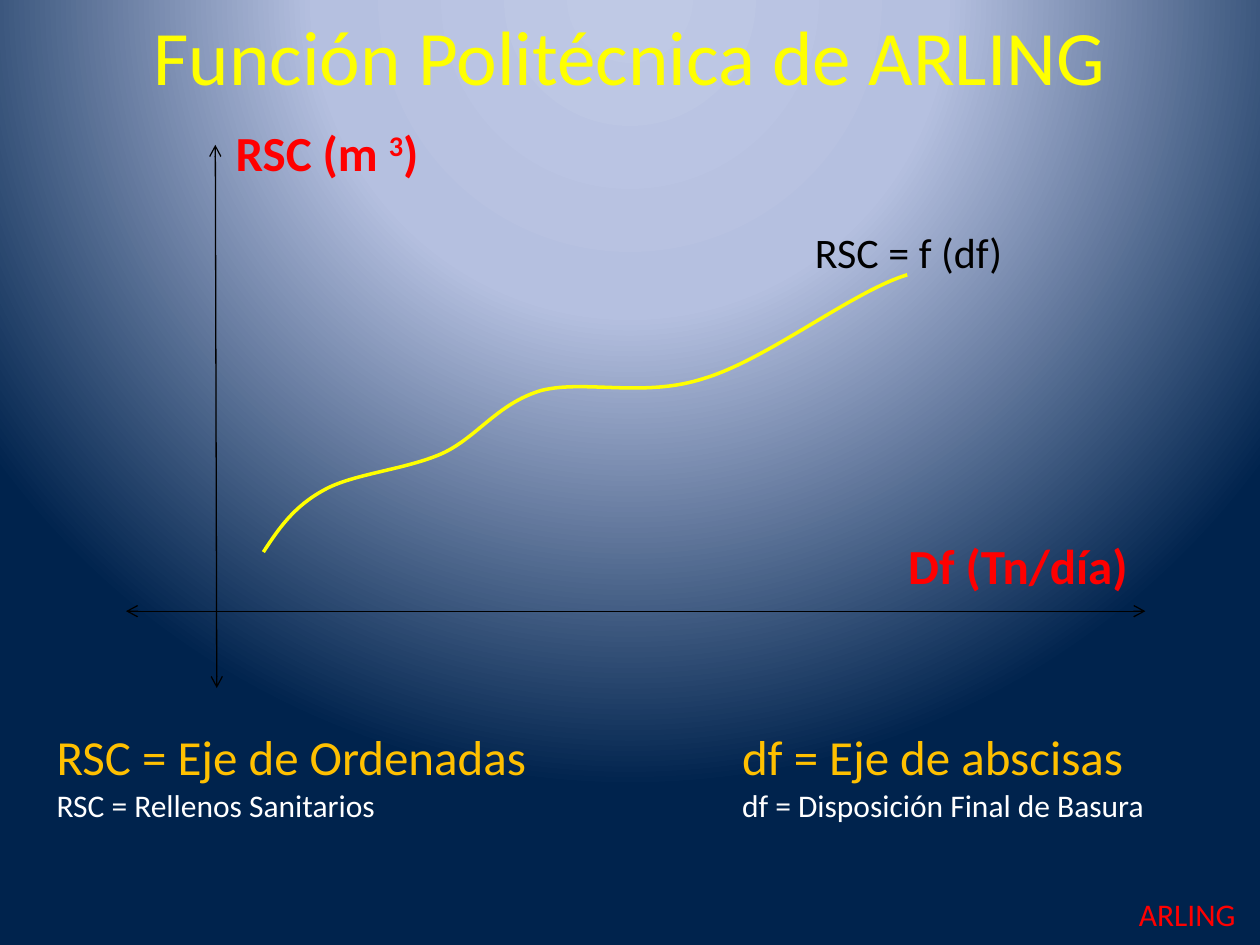
from dataclasses import dataclass

from lxml import etree
from pptx import Presentation
from pptx.dml.color import RGBColor
from pptx.enum.shapes import MSO_CONNECTOR
from pptx.enum.text import MSO_ANCHOR, MSO_AUTO_SIZE, PP_ALIGN
from pptx.oxml import parse_xml
from pptx.oxml.ns import nsdecls, qn
from pptx.util import Cm, Pt

STRAIGHT = MSO_CONNECTOR.STRAIGHT
TOP, MIDDLE = MSO_ANCHOR.TOP, MSO_ANCHOR.MIDDLE
LEFT, CENTER = PP_ALIGN.LEFT, PP_ALIGN.CENTER
NO_FIT, FIT_SHAPE = MSO_AUTO_SIZE.NONE, MSO_AUTO_SIZE.SHAPE_TO_FIT_TEXT

FONT = "Calibri"
YELLOW = RGBColor(0xFF, 0xFF, 0x00)
GOLD = RGBColor(0xFF, 0xC0, 0x00)
RED = RGBColor(0xFF, 0x00, 0x00)
BLACK = RGBColor(0x00, 0x00, 0x00)
WHITE = RGBColor(0xFF, 0xFF, 0xFF)
BG_STOPS = [
    (0, RGBColor(0xBF, 0xC9, 0xE5)),
    (40, RGBColor(0xB5, 0xC0, 0xE0)),
    (100, RGBColor(0x00, 0x23, 0x4D)),
]


@dataclass
class Run:
    text: str
    size: float
    color: RGBColor
    bold: bool = False
    superscript: bool = False


@dataclass
class Label:
    box: tuple[float, float, float, float]
    paragraphs: list[list[Run]]
    wrap: bool = True
    align: PP_ALIGN = LEFT
    anchor: MSO_ANCHOR = TOP
    fit: MSO_AUTO_SIZE = FIT_SHAPE


@dataclass
class Axis:
    start: tuple[float, float]
    end: tuple[float, float]


def legend(left: float, width: float, axis: str, meaning: str) -> Label:
    """Axis role over the meaning of its variable."""
    return Label((left, 14.53, width, 2.24),
                 [[Run(axis, 28, GOLD)], [Run(meaning, 18, WHITE)]], wrap=False)


LABELS = [
    Label((1.27, -0.48, 22.86, 3.18),
          [[Run("Función Politécnica de ARLING", 44, YELLOW)]],
          align=CENTER, anchor=MIDDLE, fit=NO_FIT),
    Label((16.18, 4.45, 4.32, 1.27), [[Run("RSC = f (df)", 24, BLACK)]], wrap=False),
    legend(14.71, 9.02, "df = Eje de abscisas", "df = Disposición Final de Basura"),
    legend(0.89, 10.08, "RSC = Eje de Ordenadas", "RSC = Rellenos Sanitarios"),
    Label((4.5, 2.34, 6.63, 1.45),
          [[Run("RSC (m ", 28, RED, True), Run("3", 28, RED, True, True),
            Run(")", 28, RED, True)]]),
    Label((18.06, 10.67, 8.84, 1.45), [[Run("Df (Tn/día)", 28, RED, True)]]),
    Label((22.71, 17.91, 5.99, 1.02), [[Run("ARLING", 18, RED)]]),
]

AXES = [Axis((4.34, 2.92), (4.37, 13.87)), Axis((2.54, 12.32), (23.09, 12.32))]

# Start point, then two control points and an end point per Bézier segment
CURVE = [
    (5.31, 11.13),
    (5.61, 10.67), (5.92, 10.21), (6.53, 9.88),
    (7.11, 9.55), (8.18, 9.47), (8.92, 9.14),
    (9.63, 8.81), (10.03, 8.13), (10.92, 7.87),
    (11.81, 7.65), (13, 8.03), (14.22, 7.62),
    (15.47, 7.24), (17.2, 5.87), (18.29, 5.54),
]


def set_background(s) -> None:
    s.background.fill.solid()
    bg = s.element.find(".//" + qn("p:bgPr"))
    stops = "".join(
        f'<a:gs pos="{pos * 1000}"><a:srgbClr val="{color}"/></a:gs>'
        for pos, color in BG_STOPS)
    grad = parse_xml(
        f'<a:gradFill {nsdecls("a")} rotWithShape="1"><a:gsLst>{stops}</a:gsLst>'
        '<a:path path="circle"><a:fillToRect l="50000" t="-80000" r="50000" b="180000"/>'
        '</a:path></a:gradFill>')
    bg.replace(bg[0], grad)


def add_label(s, label: Label) -> None:
    tf = s.shapes.add_textbox(*(Cm(v) for v in label.box)).text_frame
    tf.word_wrap = label.wrap
    tf.auto_size = label.fit
    tf.vertical_anchor = label.anchor
    for i, runs in enumerate(label.paragraphs):
        p = tf.add_paragraph() if i else tf.paragraphs[0]
        p.alignment = label.align
        for run in runs:
            r = p.add_run()
            r.text = run.text
            r.font.name = FONT
            r.font.size = Pt(run.size)
            r.font.bold = run.bold
            r.font.color.rgb = run.color
            if run.superscript:
                r.font._element.set("baseline", "30000")


def add_axis(s, axis: Axis) -> None:
    sp = s.shapes.add_connector(STRAIGHT, *(Cm(v) for v in axis.start + axis.end))
    sp.line.color.rgb = BLACK
    sp.line.width = Pt(0.75)
    ln = sp.line._get_or_add_ln()
    for end in ("a:headEnd", "a:tailEnd"):
        etree.SubElement(ln, qn(end), type="arrow")
    etree.SubElement(ln.getparent(), qn("a:effectLst"))


def add_curve(s, points: list[tuple[float, float]]) -> None:
    start, *rest = [(Cm(x), Cm(y)) for x, y in points]
    builder = s.shapes.build_freeform(*start)
    builder.add_line_segments(rest, close=False)
    sp = builder.convert_to_shape()
    sp.shadow.inherit = False
    sp.fill.background()
    sp.line.color.rgb = YELLOW
    sp.line.width = Pt(2)
    # Each three straight segments become one cubic Bézier
    lines = list(sp._element.iter(qn("a:lnTo")))
    outline = lines[0].getparent()
    for i in range(0, len(lines), 3):
        bezier = etree.SubElement(outline, qn("a:cubicBezTo"))
        for line in lines[i:i + 3]:
            bezier.append(line[0])
            outline.remove(line)


def main() -> None:
    prs = Presentation()
    prs.slide_width, prs.slide_height = Cm(25.4), Cm(19.05)
    s = prs.slides.add_slide(prs.slide_layouts[6])
    set_background(s)

    # Axes and function curve
    for axis in AXES:
        add_axis(s, axis)
    add_curve(s, CURVE)

    # Title, axis names, legends and signature
    for label in LABELS:
        add_label(s, label)

    prs.save("out.pptx")


if __name__ == "__main__":
    main()
